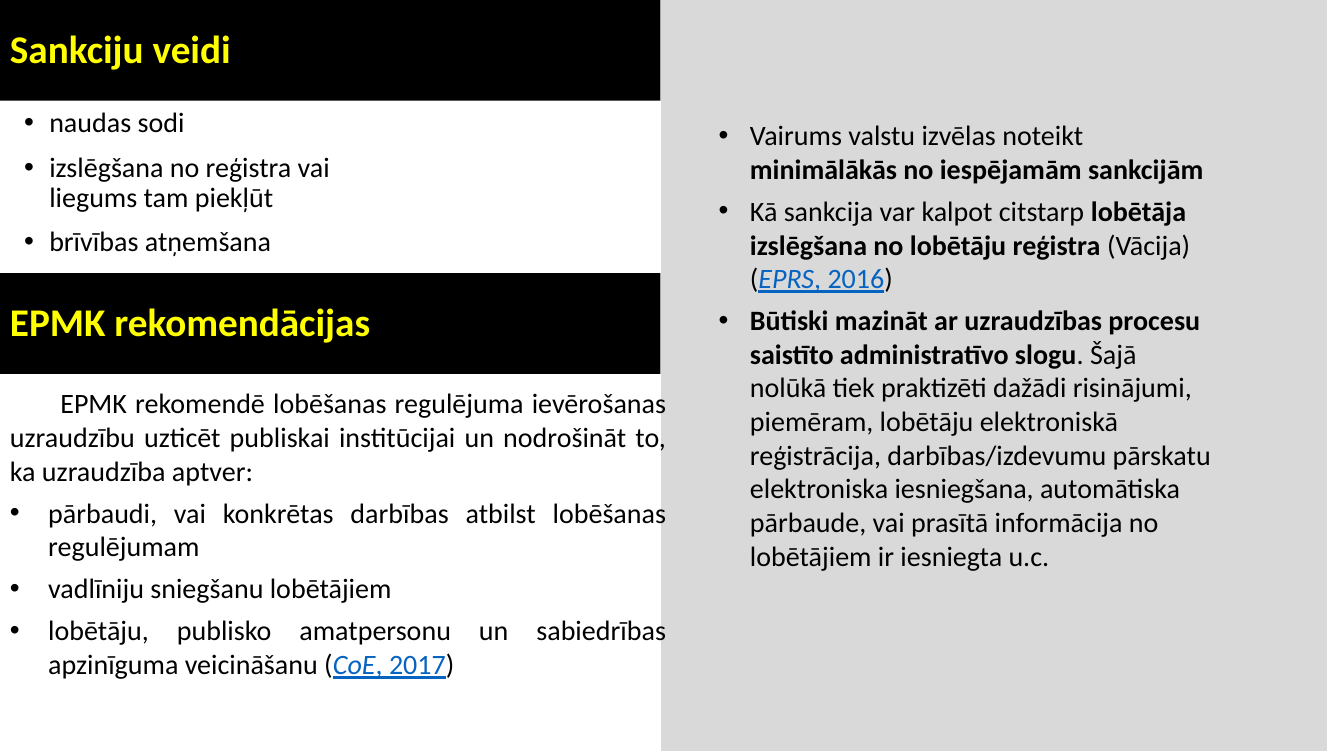
from lxml import etree
from pptx import Presentation
from pptx.dml.color import RGBColor
from pptx.enum.shapes import MSO_SHAPE as Shape
from pptx.enum.text import MSO_ANCHOR as Anchor, MSO_AUTO_SIZE as Fit, PP_ALIGN as Align
from pptx.oxml.ns import qn
from pptx.util import Inches, Pt

prs = Presentation()
prs.slide_width, prs.slide_height = Inches(13.33), Inches(7.5)
slide = prs.slides.add_slide(prs.slide_layouts[6])


def color(code):
    return RGBColor.from_string(code)


def write(box, paras, size=20, ink="000000", lead=1.0, after=0,
          align=Align.LEFT, hang=0, first=0, plain=0):
    """Fill a shape; a run is (text, style), with b bold, i italic, u link look.

    The first `plain` paragraphs have no bullet and are indented by `first`.
    """
    frame = box.text_frame
    frame.word_wrap = True
    for n, runs in enumerate(paras):
        para = frame.add_paragraph() if n else frame.paragraphs[0]
        para.alignment = align
        para.line_spacing = lead
        para.space_after = Pt(after)
        props = para._p.get_or_add_pPr()
        if n < plain:
            props.set("indent", str(Inches(first)))
        else:
            props.set("marL", str(Inches(hang)))
            props.set("indent", str(-Inches(hang)))
            etree.SubElement(props, qn("a:buFont")).set("typeface", "Arial")
            etree.SubElement(props, qn("a:buChar")).set("char", "•")
        for text, style in runs:
            run = para.add_run()
            run.text = text
            font = run.font
            font.name, font.size = "Calibri", Pt(size)
            font.bold, font.italic = "b" in style, "i" in style
            font.underline = "u" in style
            font.color.rgb = color("0563C1" if "u" in style else ink)


# Grey panel on the right
panel = slide.shapes.add_shape(Shape.RECTANGLE, Inches(6.55), Inches(-0.04),
                               Inches(6.62), Inches(7.5))
panel.shadow.inherit = False
panel.fill.solid()
panel.fill.fore_color.rgb = color("D9D9D9")
panel.line.color.rgb = color("FFFFFF")
panel.line.width = Pt(1)

# Black heading bars
for top, title in [(0, "Sankciju veidi"), (2.71, "EPMK rekomendācijas")]:
    bar = slide.shapes.add_shape(Shape.RECTANGLE, 0, Inches(top), Inches(6.55), Inches(1))
    bar.shadow.inherit = False
    bar.fill.solid()
    bar.fill.fore_color.rgb = color("000000")
    bar.line.fill.background()
    bar.text_frame.vertical_anchor = Anchor.MIDDLE
    write(bar, [[(title, "b")]], size=28, ink="FFFF00", lead=0.9, plain=1)

# Kinds of sanctions
kinds = ["naudas sodi", "izslēgšana no reģistra vai liegums tam piekļūt",
         "brīvības atņemšana"]
box = slide.shapes.add_textbox(Inches(0.14), Inches(1.03), Inches(4.09), Inches(1.65))
write(box, [[(kind, "")] for kind in kinds], lead=0.9, after=10, hang=0.25)

# Practice in other countries
facts = [
    [("Vairums valstu izvēlas noteikt ", ""),
     ("minimālākās no iespējamām sankcijām", "b")],
    [("Kā sankcija var kalpot citstarp ", ""),
     ("lobētāja izslēgšana no lobētāju reģistra", "b"),
     (" (Vācija) (", ""), ("EPRS", "iu"), (", 2016", "u"), (")", "")],
    [("Būtiski mazināt ar uzraudzības procesu saistīto administratīvo slogu", "b"),
     (". Šajā nolūkā tiek praktizēti dažādi risinājumi, piemēram, lobētāju "
      "elektroniskā reģistrācija, darbības/izdevumu pārskatu elektroniska "
      "iesniegšana, automātiska pārbaude, vai prasītā informācija no "
      "lobētājiem ir iesniegta u.c.", "")],
]
box = slide.shapes.add_textbox(Inches(7.03), Inches(1.12), Inches(5.14), Inches(4.64))
box.text_frame.auto_size = Fit.SHAPE_TO_FIT_TEXT
write(box, facts, after=6, hang=0.31)

# Recommendations
advice = [
    [("EPMK rekomendē lobēšanas regulējuma ievērošanas uzraudzību uzticēt "
      "publiskai institūcijai un nodrošināt to, ka uzraudzība aptver:", "")],
    [("pārbaudi, vai konkrētas darbības atbilst lobēšanas regulējumam", "")],
    [("vadlīniju sniegšanu lobētājiem", "")],
    [("lobētāju, publisko amatpersonu un sabiedrības apzinīguma veicināšanu (", ""),
     ("CoE", "iu"), (", 2017", "u"), (")", "")],
]
box = slide.shapes.add_textbox(0, Inches(3.78), Inches(6.71), Inches(3.05))
box.text_frame.auto_size = Fit.SHAPE_TO_FIT_TEXT
write(box, advice, after=6, align=Align.JUSTIFY, hang=0.38, first=0.5, plain=1)

prs.save("out.pptx")
